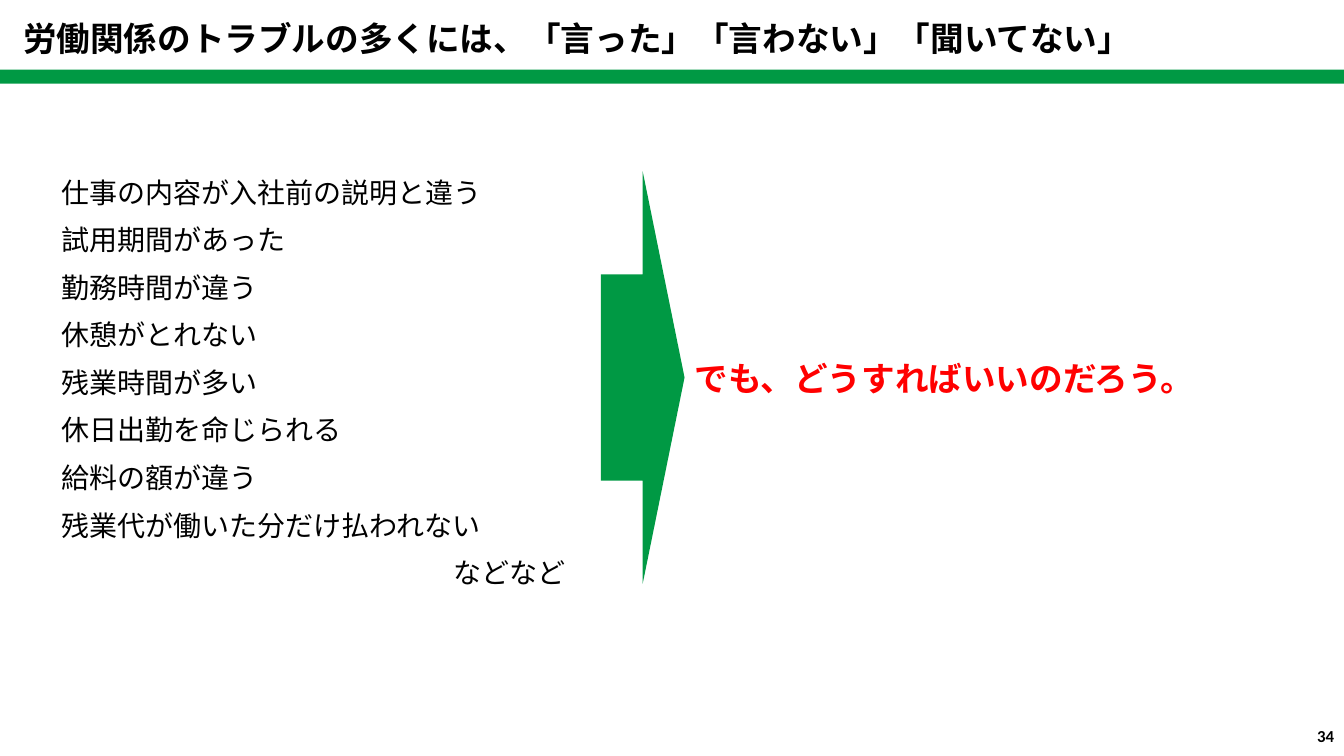
"""Build a slide on common labour disputes that lead to one question."""
from dataclasses import dataclass

from pptx import Presentation
from pptx.dml.color import RGBColor
from pptx.enum.shapes import MSO_SHAPE
from pptx.enum.text import MSO_ANCHOR, PP_ALIGN
from pptx.oxml.ns import qn
from pptx.util import Inches, Pt
from lxml.etree import SubElement


@dataclass(frozen=True)
class Theme:
    """Colours, fonts and type sizes of the slide."""
    black: RGBColor = RGBColor.from_string("000000")
    white: RGBColor = RGBColor.from_string("FFFFFF")
    green: RGBColor = RGBColor.from_string("009944")
    red: RGBColor = RGBColor.from_string("FF0000")
    japanese_font: str = "Noto Sans CJK JP"
    number_font: str = "Calibri"
    heading_size: Pt = Pt(24)
    body_size: Pt = Pt(20)
    number_size: Pt = Pt(12)
    body_spacing: Pt = Pt(34)


theme = Theme()


def format_text(shape, size, color, font=theme.japanese_font, bold=True):
    """Apply one typeface, size and colour to every run of a shape."""
    shape.text_frame.word_wrap = True
    for paragraph in shape.text_frame.paragraphs:
        for run in paragraph.runs:
            run.font.name = font
            run.font.size = size
            run.font.bold = bold
            run.font.color.rgb = color
            east_asian = SubElement(run.font._element, qn("a:ea"))
            east_asian.set("typeface", font)


def add_filled_shape(kind, left, top, width, height, color):
    """Add a preset shape with a plain fill, no line and no shadow."""
    shape = slide.shapes.add_shape(
        kind, Inches(left), Inches(top), Inches(width), Inches(height))
    shape.shadow.inherit = False
    shape.fill.solid()
    shape.fill.fore_color.rgb = color
    shape.line.fill.background()
    return shape


presentation = Presentation()
presentation.slide_width = Inches(13.33)
presentation.slide_height = Inches(7.5)
slide = presentation.slides.add_slide(presentation.slide_layouts[6])

troubles = [
    "仕事の内容が入社前の説明と違う",
    "試用期間があった",
    "勤務時間が違う",
    "休憩がとれない",
    "残業時間が多い",
    "休日出勤を命じられる",
    "給料の額が違う",
    "残業代が働いた分だけ払われない",
    "などなど",
]
trouble_panel = add_filled_shape(
    MSO_SHAPE.ROUNDED_RECTANGLE, 0.45, 1.32, 5.59, 4.82, theme.white)
trouble_panel.adjustments[0] = 0.055
trouble_frame = trouble_panel.text_frame
trouble_frame.vertical_anchor = MSO_ANCHOR.TOP
trouble_frame.margin_left = Inches(0.08)
trouble_frame.margin_top = Inches(0.2)
trouble_frame.margin_right = Inches(0.04)
trouble_frame.margin_bottom = Inches(0.04)
trouble_frame.text = "\n".join(troubles)
for paragraph in trouble_frame.paragraphs:
    paragraph.alignment = PP_ALIGN.LEFT
    paragraph.line_spacing = theme.body_spacing
closing_properties = trouble_frame.paragraphs[-1]._p.get_or_add_pPr()
closing_properties.set("marL", str(Inches(3.89)))
format_text(trouble_panel, theme.body_size, theme.black, bold=False)

title = slide.shapes.add_textbox(
    Inches(0.13), Inches(0.13), Inches(11.81), Inches(0.5))
title.text_frame.text = "労働関係のトラブルの多くには、「言った」「言わない」「聞いてない」"
format_text(title, theme.heading_size, theme.black)

add_filled_shape(MSO_SHAPE.RECTANGLE, 0, 0.69, 13.33, 0.14, theme.green)
add_filled_shape(MSO_SHAPE.RIGHT_ARROW, 5.96, 1.7, 0.83, 4.09, theme.green)

question = slide.shapes.add_textbox(
    Inches(6.79), Inches(3.5), Inches(6.3), Inches(0.5))
question.text_frame.text = "でも、どうすればいいのだろう。"
format_text(question, theme.heading_size, theme.red)

page_number = slide.shapes.add_textbox(
    Inches(10.22), Inches(7.1), Inches(3.11), Inches(0.4))
page_number.text_frame.text = "34"
page_number.text_frame.vertical_anchor = MSO_ANCHOR.MIDDLE
page_number.text_frame.paragraphs[0].alignment = PP_ALIGN.RIGHT
format_text(page_number, theme.number_size, theme.black, theme.number_font)

presentation.save("out.pptx")
